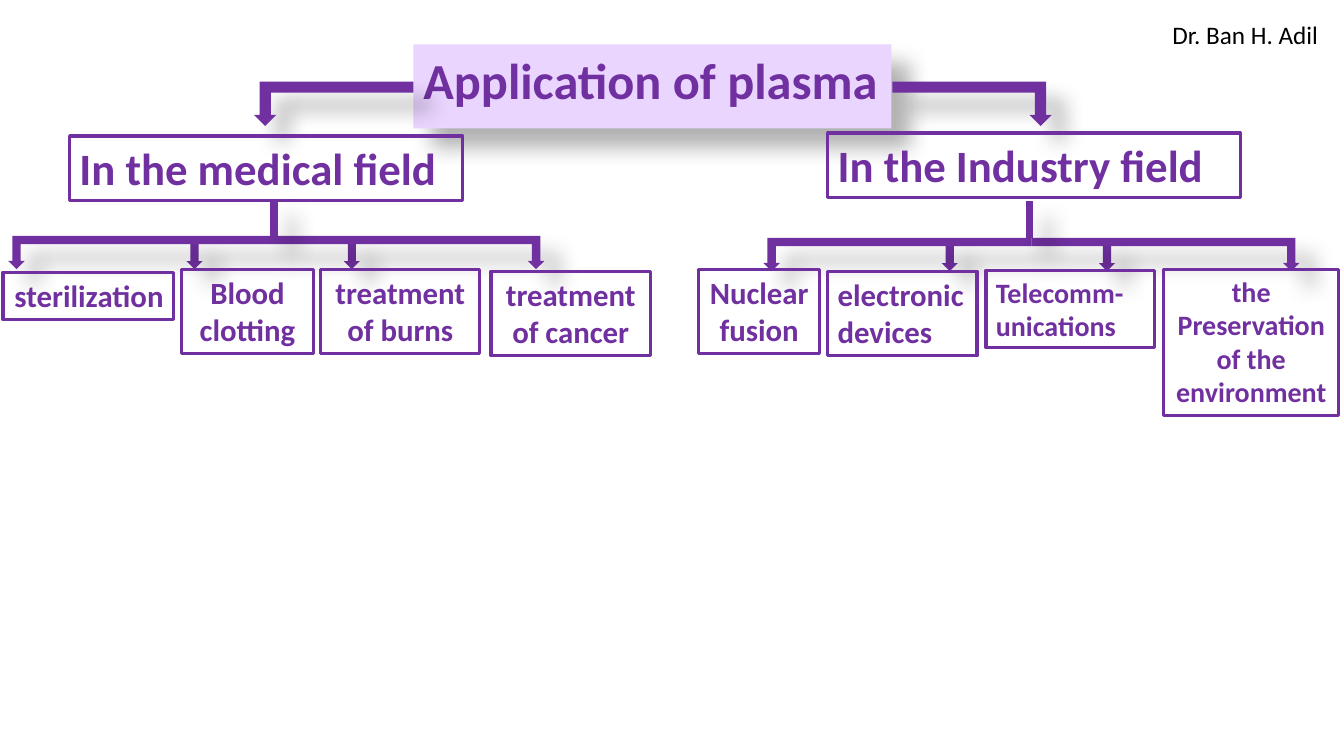
from lxml import etree
from pptx import Presentation
from pptx.dml.color import RGBColor
from pptx.enum.shapes import MSO_SHAPE as SHAPE
from pptx.enum.text import MSO_ANCHOR as ANCHOR, MSO_AUTO_SIZE as AUTO, PP_ALIGN as ALIGN
from pptx.oxml import parse_xml
from pptx.oxml.ns import nsdecls
from pptx.util import Inches, Pt

PURPLE, LILAC, BLACK = "7030A0", "EAD5FF", "000000"
LEFT, CENTER, RIGHT = ALIGN.LEFT, ALIGN.CENTER, ALIGN.RIGHT

TITLE = ("Application of plasma", (4.1, 0.44, 4.74, 0.71))
AUTHOR = ("Dr. Ban H. Adil", (11.53, 0.14, 1.67, 0.4))

# Each field: heading, its box, the top left of its arrows,
# and its uses as (text, box, size, alignment)
FIELDS = [
    ("In the Industry field", (8.21, 1.32, 4.09, 0.64), (7.57, 2.36), [
        ("Nuclear fusion", (6.93, 2.67, 1.2, 0.84), 22, CENTER),
        ("electronic devices", (8.21, 2.69, 1.48, 0.84), 22, LEFT),
        ("Telecomm-unications", (9.78, 2.68, 1.67, 0.77), 20, LEFT),
        ("the Preservation of the environment", (11.54, 2.67, 1.74, 1.45), 20, CENTER),
    ]),
    ("In the medical field", (0.69, 1.35, 3.9, 0.64), (0.08, 2.34), [
        ("sterilization", (0.03, 2.7, 1.69, 0.47), 22, RIGHT),
        ("Blood clotting", (1.8, 2.67, 1.31, 0.84), 22, CENTER),
        ("treatment of burns", (3.18, 2.67, 1.58, 0.84), 22, CENTER),
        ("treatment of cancer", (4.87, 2.69, 1.58, 0.84), 22, CENTER),
    ]),
]


def rgb(color):
    return RGBColor.from_string(color)


def inches(box):
    return [Inches(v) for v in box]


def cast_shadow(s):
    """Give the shape a soft shadow to the lower right."""
    s.shadow.inherit = False
    effects = s._element.spPr.find("{*}effectLst")
    effects.append(parse_xml(
        f'<a:outerShdw {nsdecls("a")} blurRad="{Pt(15)}" dist="{Pt(18)}" dir="2700000"'
        ' algn="tl" rotWithShape="0"><a:srgbClr val="000000"><a:alpha val="30000"/>'
        '</a:srgbClr></a:outerShdw>'))


def write(s, text, size, color=PURPLE, bold=True, align=LEFT):
    tf = s.text_frame
    tf.word_wrap = True
    tf.auto_size = AUTO.SHAPE_TO_FIT_TEXT
    tf.vertical_anchor = ANCHOR.TOP
    p = tf.paragraphs[0]
    p.text = text
    p.alignment = align
    p.line_spacing = 1.0
    p.font.name = "Calibri"
    p.font.size = Pt(size)
    p.font.bold = bold
    p.font.color.rgb = rgb(color)


def add_box(slide, text, box, size, align=LEFT):
    s = slide.shapes.add_shape(SHAPE.RECTANGLE, *inches(box))
    s.shadow.inherit = False
    s.fill.background()
    s.line.color.rgb = rgb(PURPLE)
    s.line.width = Pt(2.25)
    write(s, text, size, align=align)


def add_solid(slide, kind, box, rotation=0, flip=False):
    s = slide.shapes.add_shape(kind, *inches(box))
    s.fill.solid()
    s.fill.fore_color.rgb = rgb(PURPLE)
    s.line.fill.background()
    s.rotation = rotation
    if flip:
        s._element.spPr.xfrm.set("flipH", "1")
    cast_shadow(s)


def add_bent_pair(slide, left, right, y, w, h):
    """Two mirrored arrows that run outwards and then down."""
    for x, flip in ((left, False), (right, True)):
        add_solid(slide, SHAPE.BENT_UP_ARROW, (x, y, w, h), 180, flip)


def add_branches(slide, x, y):
    for dx in (1.77, 3.33):
        add_solid(slide, SHAPE.DOWN_ARROW, (x + dx, y + 0.04, 0.16, 0.29))
    add_bent_pair(slide, x, x + 2.66, y, 2.66, 0.33)
    add_solid(slide, SHAPE.MATH_MINUS, (x + 2.39, y - 0.34, 0.5, 0.32), 90)


def main():
    prs = Presentation()
    prs.slide_width, prs.slide_height = Inches(13.33), Inches(7.5)
    slide = prs.slides.add_slide(prs.slide_layouts[5])

    text, box = TITLE
    title = slide.shapes.title
    title.left, title.top, title.width, title.height = inches(box)
    title.fill.solid()
    title.fill.fore_color.rgb = rgb(LILAC)
    cast_shadow(title)
    write(title, text, 36)
    add_bent_pair(slide, 2.52, 8.85, 0.81, 1.58, 0.44)

    for heading, box, corner, uses in FIELDS:
        add_box(slide, heading, box, 32)
        add_branches(slide, *corner)
        for use in uses:
            add_box(slide, *use)

    text, box = AUTHOR
    write(slide.shapes.add_textbox(*inches(box)), text, 18, BLACK, bold=False)
    prs.save("out.pptx")


if __name__ == "__main__":
    main()
